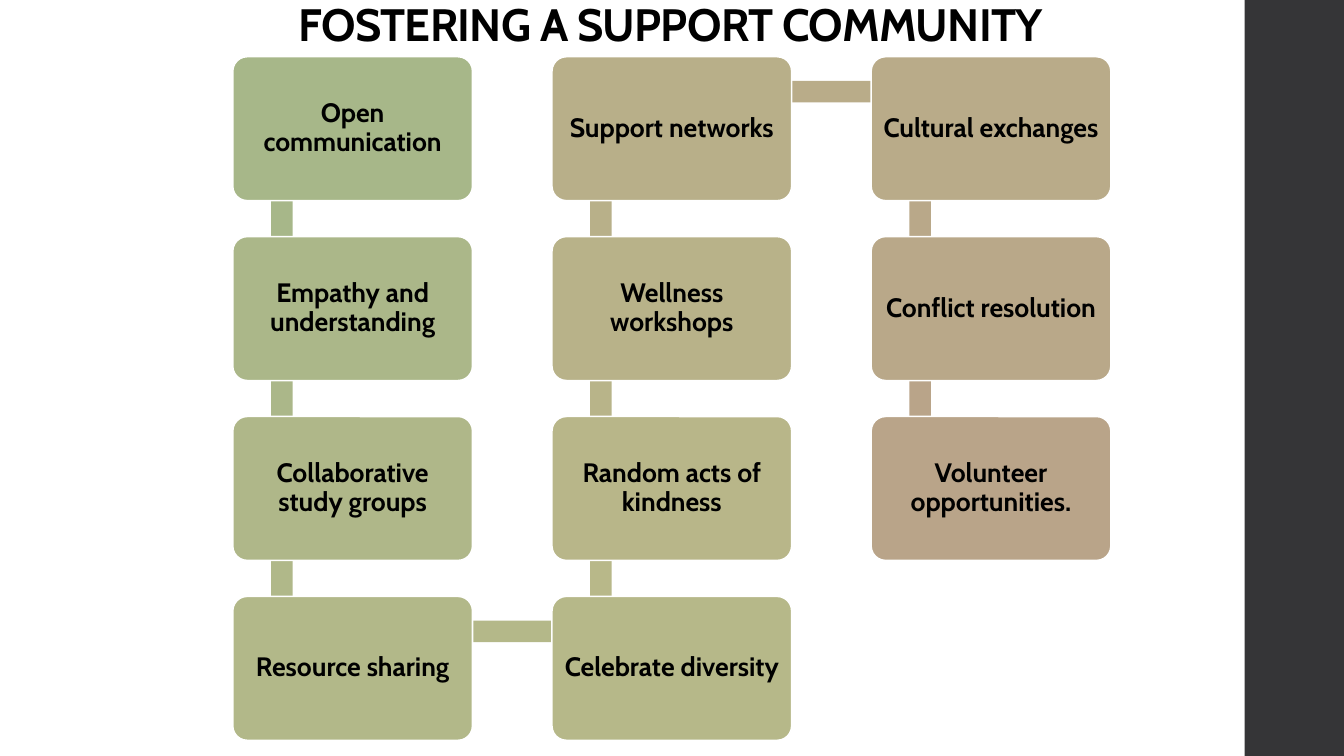
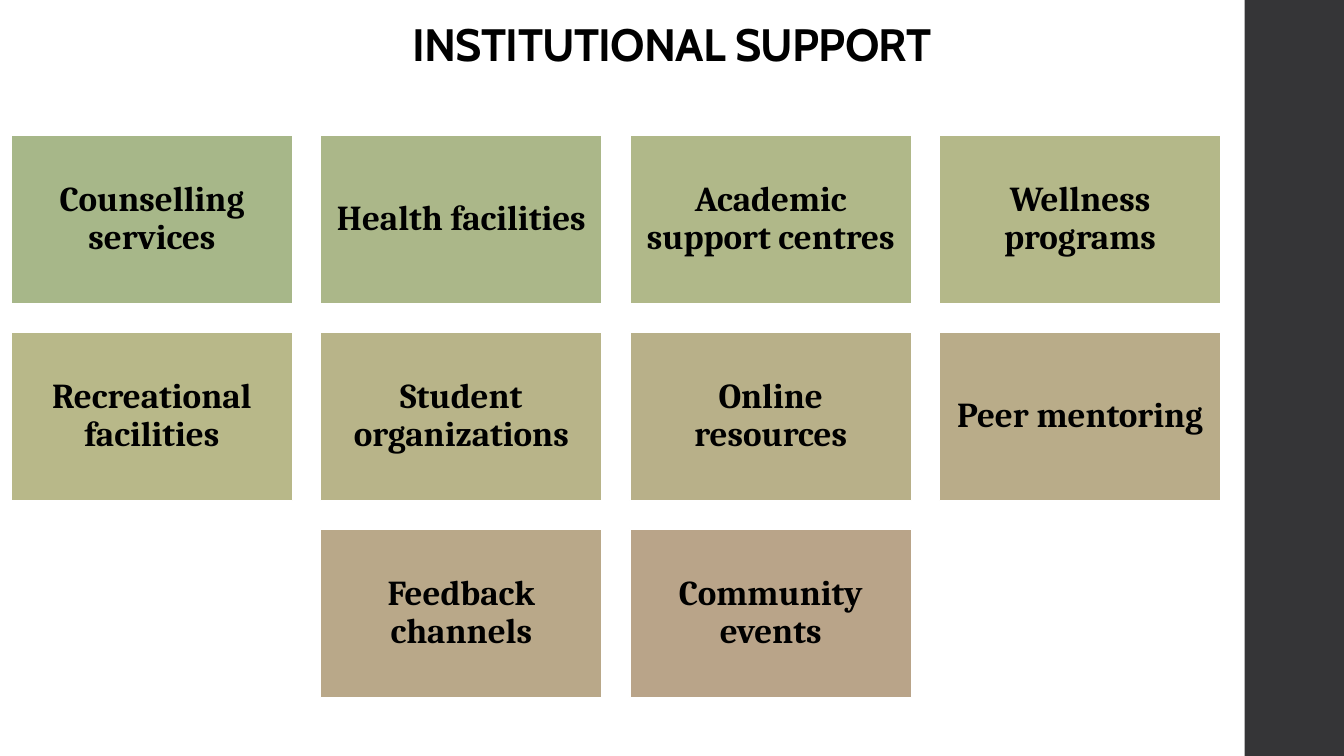
from dataclasses import dataclass

from pptx import Presentation
from pptx.dml.color import RGBColor
from pptx.enum.shapes import MSO_SHAPE as Preset
from pptx.enum.text import MSO_ANCHOR as Anchor, MSO_AUTO_SIZE as AutoSize, PP_ALIGN as Align
from pptx.util import Pt


@dataclass(frozen=True)
class Theme:
    band: str = "353537"
    text: str = "000000"
    edge: str = "FFFFFF"
    ramp: tuple = ((0xA7, 0xB7, 0x89), (0xB8, 0xB8, 0x89), (0xB9, 0xA4, 0x89))
    ramp_knee: float = 4 / 9
    title_font: str = "Cabin"
    title_size: float = 32.4
    edge_width: float = 1.1
    line_spacing: float = 0.9


@dataclass(frozen=True)
class Box:
    left: float
    top: float
    width: float
    height: float


@dataclass(frozen=True)
class Grid:
    left: float
    top: float
    width: float
    height: float
    pitch_x: float
    pitch_y: float

    def cell(self, col: float, row: int) -> Box:
        return Box(self.left + col * self.pitch_x, self.top + row * self.pitch_y,
                   self.width, self.height)


@dataclass(frozen=True)
class CardStyle:
    preset: Preset
    font: str
    size: float
    inset: float


THEME = Theme()
SLIDE_W, SLIDE_H = 960, 540

SNAKE_GRID = Grid(166.3, 40.5, 171.2, 102.8, 228, 128.5)
SNAKE_ROWS = 4
SNAKE_STYLE = CardStyle(Preset.ROUNDED_RECTANGLE, "Cabin", 19, 5.5)
LINK_THICKNESS = 15.4
LINK_DX, LINK_DY = 35, 25
COMMUNITY = [
    "Open communication", "Empathy and understanding", "Collaborative study groups",
    "Resource sharing", "Celebrate diversity", "Random acts of kindness",
    "Wellness workshops", "Support networks", "Cultural exchanges",
    "Conflict resolution", "Volunteer opportunities.",
]

TILE_GRID = Grid(8, 96.5, 201, 120.5, 221, 140.6)
TILE_COLS = 4
TILE_STYLE = CardStyle(Preset.RECTANGLE, "Cambria", 25, 7)
SERVICES = [
    "Counselling services", "Health facilities", "Academic support centres",
    "Wellness programs", "Recreational facilities", "Student organizations",
    "Online resources", "Peer mentoring", "Feedback channels", "Community events",
]


def shade(index: int, count: int) -> RGBColor:
    t = index / (count - 1)
    start, middle, end = THEME.ramp
    knee = THEME.ramp_knee
    if t <= knee:
        a, b, f = start, middle, t / knee
    else:
        a, b, f = middle, end, (t - knee) / (1 - knee)
    return RGBColor(*(round(x + (y - x) * f) for x, y in zip(a, b)))


def add_block(slide, preset: Preset, box: Box, color: RGBColor):
    sp = slide.shapes.add_shape(preset, Pt(box.left), Pt(box.top),
                                Pt(box.width), Pt(box.height))
    sp.shadow.inherit = False
    sp.fill.solid()
    sp.fill.fore_color.rgb = color
    sp.line.fill.background()
    return sp


def write(tf, text: str, font: str, size: float):
    p = tf.paragraphs[0]
    p.alignment = Align.CENTER
    p.line_spacing = THEME.line_spacing
    r = p.add_run()
    r.text = text
    r.font.name = font
    r.font.size = Pt(size)
    r.font.bold = True
    r.font.color.rgb = RGBColor.from_string(THEME.text)
    return r


def add_card(slide, box: Box, text: str, color: RGBColor, style: CardStyle) -> None:
    sp = add_block(slide, style.preset, box, color)
    if style.preset == Preset.ROUNDED_RECTANGLE:
        sp.adjustments[0] = 0.1
    sp.line.color.rgb = RGBColor.from_string(THEME.edge)
    sp.line.width = Pt(THEME.edge_width)
    tf = sp.text_frame
    tf.word_wrap = True
    tf.vertical_anchor = Anchor.MIDDLE
    tf.margin_left = tf.margin_right = tf.margin_top = tf.margin_bottom = Pt(style.inset)
    write(tf, text, style.font, style.size)


def add_link(slide, a: Box, b: Box, color: RGBColor) -> None:
    half = LINK_THICKNESS / 2
    x, y = min(a.left, b.left) + LINK_DX, min(a.top, b.top) + LINK_DY
    if a.left == b.left:
        bar = Box(x - half, y, LINK_THICKNESS, abs(b.top - a.top))
    else:
        bar = Box(x, y - half, abs(b.left - a.left), LINK_THICKNESS)
    add_block(slide, Preset.RECTANGLE, bar, color)


def add_titled_slide(prs, layout, title: str, box: Box):
    s = prs.slides.add_slide(layout)
    sp = s.shapes.title
    sp.left, sp.top, sp.width, sp.height = (
        Pt(box.left), Pt(box.top), Pt(box.width), Pt(box.height))
    tf = sp.text_frame
    tf.auto_size = AutoSize.NONE
    tf.vertical_anchor = Anchor.BOTTOM
    r = write(tf, title, THEME.title_font, THEME.title_size)
    r.font._element.set("spc", "-50")
    return s


def move_band_to_layout(slide, layout) -> None:
    band = add_block(slide, Preset.RECTANGLE, Box(889, 0, 71, SLIDE_H),
                     RGBColor.from_string(THEME.band))
    layout.shapes.element.insert(2, band.element)


def snake_cell(index: int) -> Box:
    col, step = divmod(index, SNAKE_ROWS)
    row = SNAKE_ROWS - 1 - step if col % 2 else step
    return SNAKE_GRID.cell(col, row)


def draw_snake(slide, labels: list[str]) -> None:
    cells = [snake_cell(i) for i in range(len(labels))]
    links = list(zip(cells, cells[1:]))
    for i, (a, b) in enumerate(links):
        add_link(slide, a, b, shade(i, len(links)))
    for i, (box, label) in enumerate(zip(cells, labels)):
        add_card(slide, box, label, shade(i, len(labels)), SNAKE_STYLE)


def draw_tiles(slide, labels: list[str]) -> None:
    for i, label in enumerate(labels):
        row, col = divmod(i, TILE_COLS)
        in_row = min(TILE_COLS, len(labels) - row * TILE_COLS)
        box = TILE_GRID.cell(col + (TILE_COLS - in_row) / 2, row)
        add_card(slide, box, label, shade(i, len(labels)), TILE_STYLE)


def main() -> None:
    prs = Presentation()
    prs.slide_width, prs.slide_height = Pt(SLIDE_W), Pt(SLIDE_H)
    layout = prs.slide_layouts[5]

    s = add_titled_slide(prs, layout, "FOSTERING A SUPPORT COMMUNITY", Box(65, 0, 828, 40.3))
    move_band_to_layout(s, layout)
    draw_snake(s, COMMUNITY)

    s = add_titled_slide(prs, layout, "INSTITUTIONAL SUPPORT", Box(66, 13, 828, 41.8))
    draw_tiles(s, SERVICES)

    prs.save("out.pptx")


if __name__ == "__main__":
    main()
